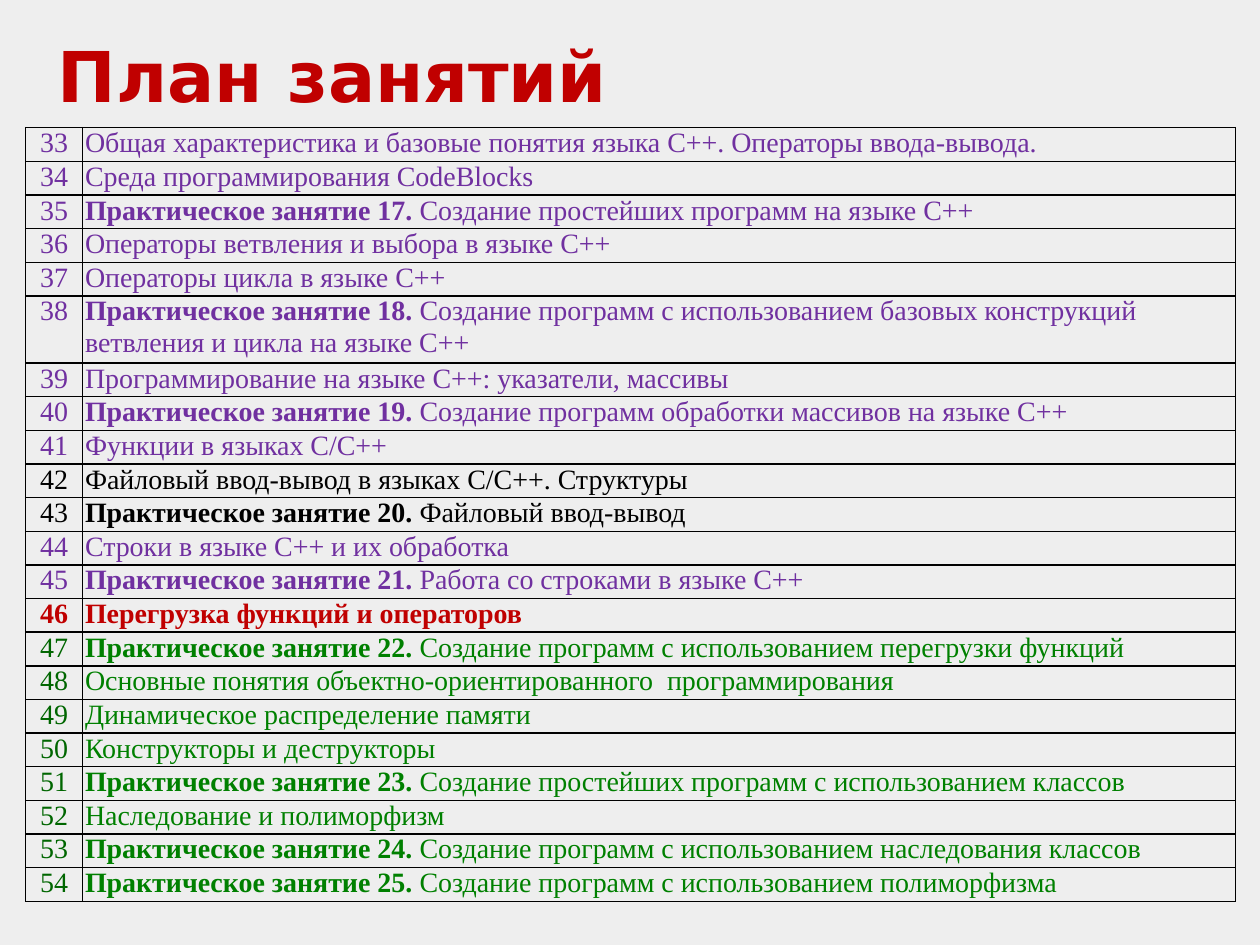
from dataclasses import dataclass

from lxml.etree import SubElement as Sub
from pptx import Presentation
from pptx.dml.color import RGBColor as RGB
from pptx.enum.text import MSO_ANCHOR as Anchor, PP_ALIGN as Align
from pptx.oxml.ns import qn
from pptx.util import Pt


@dataclass(frozen=True)
class Theme:
    back: str = "EEEEEE"
    line: str = "000000"
    red: str = "C00000"
    done: str = "7030A0"
    open: str = "000000"
    plan: str = "008000"
    dark: str = "006600"
    head: str = "DejaVu Sans"
    body: str = "Times New Roman"
    big: int = 40
    small: int = 16


LEAD = "Практическое занятие"

# Lessons: number colour, text colour, bold, topics; practical ones have a number
GROUPS = [
    ("done", "done", False, [
        "Общая характеристика и базовые понятия языка C++. Операторы ввода-вывода.",
        "Среда программирования CodeBlocks",
        (17, "Создание простейших программ на языке C++"),
        "Операторы ветвления и выбора в языке С++",
        "Операторы цикла в языке С++",
        (18, "Создание программ с использованием базовых конструкций "
             "ветвления и цикла на языке C++"),
        "Программирование на языке C++: указатели, массивы",
        (19, "Создание программ обработки массивов на языке C++"),
        "Функции в языках C/C++",
    ]),
    ("open", "open", False, [
        "Файловый ввод-вывод в языках C/C++. Структуры",
        (20, "Файловый ввод-вывод"),
    ]),
    ("done", "done", False, [
        "Строки в языке С++ и их обработка",
        (21, "Работа со строками в языке C++"),
    ]),
    ("red", "red", True, ["Перегрузка функций и операторов"]),
    ("dark", "plan", False, [
        (22, "Создание программ с использованием перегрузки функций"),
        "Основные понятия объектно-ориентированного  программирования",
        "Динамическое распределение памяти",
        "Конструкторы и деструкторы",
        (23, "Создание простейших программ с использованием классов"),
        "Наследование и полиморфизм",
        (24, "Создание программ с использованием наследования классов"),
        (25, "Создание программ с использованием полиморфизма"),
    ]),
]


def write(para, text, *, font, size, color, bold=False, align=Align.LEFT):
    para.alignment = align
    run = para.add_run()
    run.text = text
    face = run.font
    face.name, face.size, face.bold = font, Pt(size), bold
    face.color.rgb = RGB.from_string(color)


class Deck:
    def __init__(self, theme):
        self.theme = theme
        self.show = Presentation()
        self.show.slide_width, self.show.slide_height = Pt(720), Pt(540)
        self.slide = self.show.slides.add_slide(self.show.slide_layouts[6])
        fill = self.slide.background.fill
        fill.solid()
        fill.fore_color.rgb = RGB.from_string(theme.back)

    def title(self, text, x, y, w, h):
        box = self.slide.shapes.add_textbox(Pt(x), Pt(y), Pt(w), Pt(h))
        frame = box.text_frame
        frame.word_wrap = True
        frame.vertical_anchor = Anchor.MIDDLE
        write(frame.paragraphs[0], text, font=self.theme.head,
              size=self.theme.big, color=self.theme.red, bold=True)

    def table(self, x, y, widths, heights):
        shape = self.slide.shapes.add_table(
            len(heights), len(widths), Pt(x), Pt(y),
            Pt(sum(widths)), Pt(sum(heights)))
        grid = shape.table
        grid.first_row = grid.horz_banding = False
        for col, width in zip(grid.columns, widths):
            col.width = Pt(width)
        for row, height in zip(grid.rows, heights):
            row.height = Pt(height)
        return grid

    def cell(self, cell, runs, color, align=Align.LEFT):
        cell.margin_left = cell.margin_right = Pt(1.5)
        cell.margin_top = cell.margin_bottom = 0
        self.frame(cell)
        cell.fill.background()
        for text, bold in runs:
            write(cell.text_frame.paragraphs[0], text, font=self.theme.body,
                  size=self.theme.small, color=color, bold=bold, align=align)

    def frame(self, cell):
        props = cell._tc.get_or_add_tcPr()
        for side in "LRTB":
            line = Sub(props, qn(f"a:ln{side}"), w=str(Pt(1)))
            paint = Sub(line, qn("a:solidFill"))
            Sub(paint, qn("a:srgbClr"), val=self.theme.line)


def main():
    theme = Theme()
    deck = Deck(theme)

    # Title
    deck.title("План занятий", 26, 15, 668, 55.5)

    # Lesson table: one row a lesson, the long topic takes two lines
    rows = [(num, tone, bold, topic)
            for num, tone, bold, topics in GROUPS for topic in topics]
    unit = 19.2
    heights = [unit * (2 if len(topic[-1]) > 70 else 1) for *_, topic in rows]
    grid = deck.table(14.7, 73, [32.4, 658.8], heights)
    for i, (num, tone, bold, topic) in enumerate(rows):
        if isinstance(topic, tuple):
            runs = [(f"{LEAD} {topic[0]}. ", True), (topic[1], False)]
        else:
            runs = [(topic, bold)]
        deck.cell(grid.cell(i, 0), [(str(33 + i), bold)],
                  getattr(theme, num), Align.CENTER)
        deck.cell(grid.cell(i, 1), runs, getattr(theme, tone))

    deck.show.save("out.pptx")


if __name__ == "__main__":
    main()
